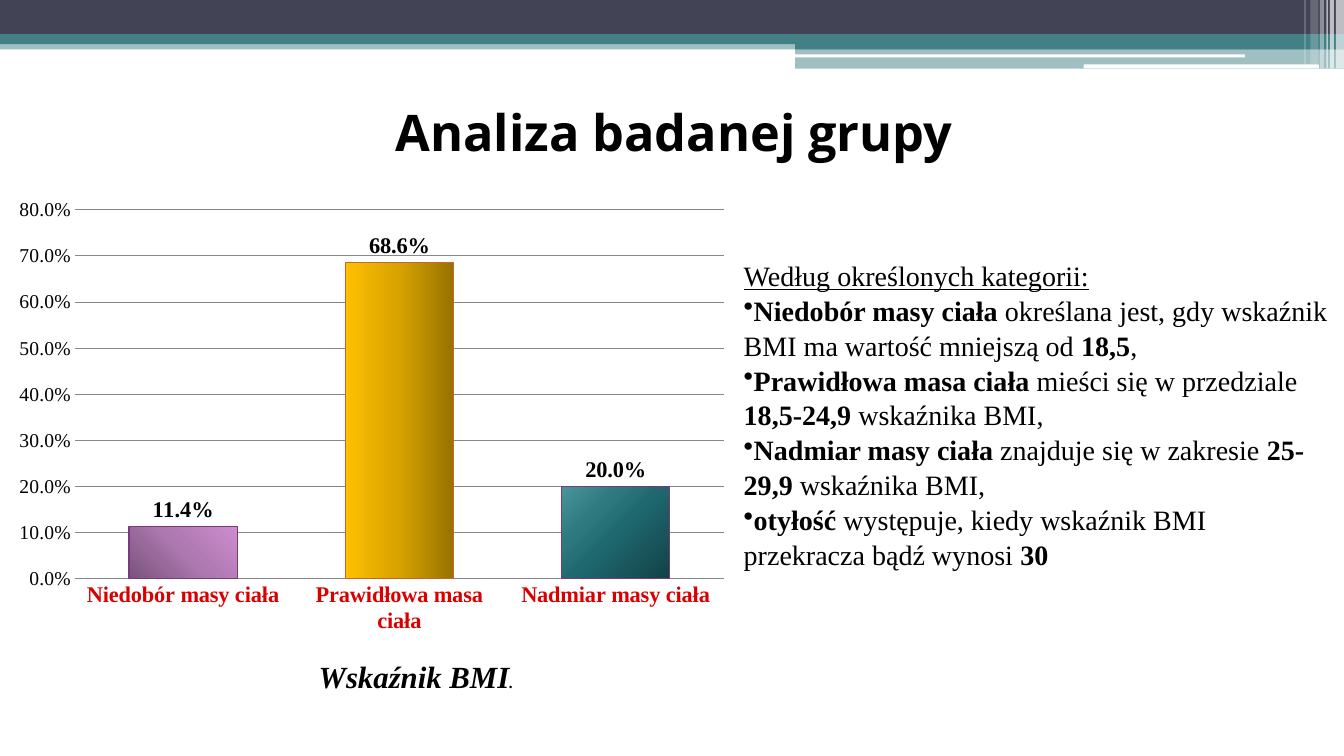
from typing import NamedTuple

from lxml import etree
from pptx import Presentation
from pptx import util as u
from pptx.chart.data import CategoryChartData
from pptx.dml.color import RGBColor
from pptx.enum import chart as ch, shapes, text
from pptx.oxml import parse_xml
from pptx.oxml.ns import nsdecls, qn

SLIDE_WIDTH, SLIDE_HEIGHT = u.Inches(13.33), u.Inches(7.5)
NAVY = RGBColor(0x42, 0x44, 0x56)
TEAL = RGBColor(0x43, 0x80, 0x86)
WHITE = RGBColor(0xFF, 0xFF, 0xFF)
BLACK = RGBColor(0, 0, 0)
RED = RGBColor(0xDA, 0, 0)
GRAY = RGBColor(0x87, 0x87, 0x87)
PLUM = RGBColor(0x78, 0x3A, 0x7A)
ORANGE = RGBColor(0xC8, 0x64, 0x2C)
SERIF, SANS = "Times New Roman", "Open Sans"


class Area(NamedTuple):
    """Left, top, width and height as percentages of the slide."""
    left: float
    top: float
    width: float
    height: float

    def emu(self) -> tuple:
        sides = (SLIDE_WIDTH, SLIDE_HEIGHT, SLIDE_WIDTH, SLIDE_HEIGHT)
        return tuple(round(side * share / 100) for side, share in zip(sides, self))


class Band(NamedTuple):
    area: Area
    color: RGBColor
    opacity: int = 100
    rounded: bool = False


class Category(NamedTuple):
    label: str
    share: float
    stops: tuple
    outline: RGBColor
    direction: str


class Run(NamedTuple):
    wording: str
    bold: bool = False


BANDS = [
    Band(Area(0, 5.33, 100, 1.2), TEAL, 50),
    Band(Area(0, 0, 100, 4.53), NAVY),
    Band(Area(0, 4.53, 100, 1.33), TEAL),
    Band(Area(59.17, 5.2, 40.83, 1.33), TEAL),
    Band(Area(59.17, 6.4, 40.83, 2.67), TEAL, 50),
    Band(Area(59.1, 7.2, 33.53, 0.4), WHITE, rounded=True),
    Band(Area(80.63, 8.53, 17.5, 0.53), WHITE, rounded=True),
    Band(Area(99.4, 0, 0.6, 9.07), WHITE, 65),
    Band(Area(98.95, 0, 0.3, 9.07), WHITE, 65),
    Band(Area(98.7, 0, 0.1, 9.07), WHITE, 60),
    Band(Area(98.2, 0, 0.3, 9.07), WHITE, 40),
    Band(Area(97.5, 0, 0.6, 8.53), WHITE, 20),
    Band(Area(97.05, 0, 0.1, 8.53), WHITE, 30),
]

CATEGORIES = [
    Category("Niedobór masy ciała", 0.114,
             ((0, "79537B"), (50, "AD77AF"), (100, "CD8DCF")), PLUM,
             '<a:lin %s ang="18900000" scaled="0"/>'),
    Category("Prawidłowa masa ciała", 0.686,
             ((0, "977200"), (50, "D7A200"), (100, "FFC000")), ORANGE,
             '<a:lin %s ang="10800000" scaled="0"/>'),
    Category("Nadmiar masy ciała", 0.2,
             ((0, "124246"), (50, "1F686F"), (70, "2E787F"), (100, "4A959D")), PLUM,
             '<a:path %s path="circle"><a:fillToRect l="100000" t="100000"/></a:path>'),
]

DEFINITIONS = [
    [Run("Niedobór masy ciała", True),
     Run(" określana jest, gdy wskaźnik BMI ma wartość mniejszą od "),
     Run("18,5", True), Run(",")],
    [Run("Prawidłowa masa ciała", True), Run(" mieści się w przedziale "),
     Run("18,5-24,9", True), Run(" wskaźnika BMI,")],
    [Run("Nadmiar masy ciała", True), Run(" znajduje się w zakresie "),
     Run("25-29,9 ", True), Run("wskaźnika BMI,")],
    [Run("otyłość ", True), Run("występuje, kiedy wskaźnik BMI przekracza bądź wynosi "),
     Run("30", True)],
]


def style(font, size: float, name: str = SERIF, color: RGBColor = BLACK,
          bold: bool = False) -> None:
    font.size, font.name, font.bold = u.Pt(size), name, bold
    font.color.rgb = color


def draw_band(slide, band: Band) -> None:
    kind = shapes.MSO_SHAPE.ROUNDED_RECTANGLE if band.rounded else shapes.MSO_SHAPE.RECTANGLE
    strip = slide.shapes.add_shape(kind, *band.area.emu())
    strip.shadow.inherit = False
    strip.line.fill.background()
    strip.fill.solid()
    strip.fill.fore_color.rgb = band.color
    if band.opacity < 100:
        tint = strip.fill._xPr.find(".//" + qn("a:srgbClr"))
        etree.SubElement(tint, qn("a:alpha"), val=str(band.opacity * 1000))


def add_text(slide, area: Area, anchor, wrap: bool = True):
    frame = slide.shapes.add_textbox(*area.emu()).text_frame
    frame.word_wrap, frame.vertical_anchor = wrap, anchor
    return frame


def paint_bar(point, category: Category) -> None:
    point.format.line.color.rgb = category.outline
    point.format.line.width = u.Pt(0.75)
    point.format.fill.gradient()
    gradient = point.format.fill._xPr.find(qn("a:gradFill"))
    for child in list(gradient):
        gradient.remove(child)
    stops = etree.SubElement(gradient, qn("a:gsLst"))
    for position, color in category.stops:
        stop = etree.SubElement(stops, qn("a:gs"), pos=str(position * 1000))
        etree.SubElement(stop, qn("a:srgbClr"), val=color)
    gradient.append(parse_xml(category.direction % nsdecls("a")))


def place_plot(chart, area: Area) -> None:
    plot_area = chart._chartSpace.chart.plotArea
    for layout in plot_area.findall(qn("c:layout")):
        plot_area.remove(layout)
    layout = etree.Element(qn("c:layout"))
    manual = etree.SubElement(layout, qn("c:manualLayout"))
    settings = [("layoutTarget", "inner"), ("xMode", "edge"), ("yMode", "edge")]
    settings += [(side, str(share / 100)) for side, share in zip("xywh", area)]
    for tag, value in settings:
        etree.SubElement(manual, qn("c:" + tag), val=value)
    plot_area.insert(0, layout)


def draw_bmi_chart(slide, area: Area) -> None:
    data = CategoryChartData(number_format="0.0%")
    data.categories = [category.label for category in CATEGORIES]
    data.add_series("Series 1", [category.share for category in CATEGORIES])
    chart = slide.shapes.add_chart(
        ch.XL_CHART_TYPE.COLUMN_CLUSTERED, *area.emu(), data).chart
    chart.has_legend = chart.has_title = False
    style(chart.font, 10)
    place_plot(chart, Area(9.9, 2.8, 85.7, 72.1))

    groups, percents = chart.category_axis, chart.value_axis
    for axis in (groups, percents):
        axis.major_tick_mark = axis.minor_tick_mark = ch.XL_TICK_MARK.NONE
    style(groups.tick_labels.font, 16, color=RED, bold=True)
    groups.format.line.color.rgb = GRAY
    style(percents.tick_labels.font, 14)
    percents.tick_labels.number_format = "0.0%"
    percents.tick_labels.number_format_is_linked = False
    percents.minimum_scale, percents.maximum_scale, percents.major_unit = 0, 0.8, 0.1
    percents.format.line.fill.background()
    percents.major_gridlines.format.line.color.rgb = GRAY

    columns = chart.plots[0]
    columns.gap_width, columns.overlap, columns.vary_by_categories = 100, -24, False
    columns.has_data_labels = True
    labels = columns.data_labels
    labels.show_value = True
    labels.number_format, labels.number_format_is_linked = "0.0%", False
    labels.position = ch.XL_LABEL_POSITION.OUTSIDE_END
    style(labels.font, 16, bold=True)
    for index, category in enumerate(CATEGORIES):
        paint_bar(columns.series[0].points[index], category)


def write_definitions(slide, area: Area) -> None:
    frame = add_text(slide, area, text.MSO_ANCHOR.TOP)
    heading = frame.paragraphs[0]
    heading.text = "Według określonych kategorii:"
    style(heading.font, 20)
    heading.font.underline = True
    heading.line_spacing = 1.04
    for runs in DEFINITIONS:
        definition = frame.add_paragraph()
        definition.line_spacing = 1.04
        etree.SubElement(definition._p.get_or_add_pPr(), qn("a:buChar"), char="•")
        for wording, bold in runs:
            run = definition.add_run()
            run.text = wording
            style(run.font, 20, bold=bold)


def main() -> None:
    deck = Presentation()
    deck.slide_width, deck.slide_height = SLIDE_WIDTH, SLIDE_HEIGHT
    slide = deck.slides.add_slide(deck.slide_layouts[6])
    for band in BANDS:
        draw_band(slide, band)

    title = add_text(slide, Area(5.17, 9.07, 90, 16.67), text.MSO_ANCHOR.MIDDLE).paragraphs[0]
    title.text, title.alignment = "Analiza badanej grupy", text.PP_ALIGN.CENTER
    style(title.font, 36, SANS, bold=True)

    draw_bmi_chart(slide, Area(0, 25.87, 56.34, 67.73))

    caption = add_text(slide, Area(22.88, 86.27, 16.13, 6.27),
                       text.MSO_ANCHOR.MIDDLE, wrap=False).paragraphs[0]
    caption.alignment = text.PP_ALIGN.CENTER
    for wording, size in (("Wskaźnik BMI", 22), (".", 11)):
        run = caption.add_run()
        run.text = wording
        style(run.font, size, bold=True)
        run.font.italic = True

    write_definitions(slide, Area(54.6, 33.33, 45.4, 41.33))
    deck.save("out.pptx")


if __name__ == "__main__":
    main()
